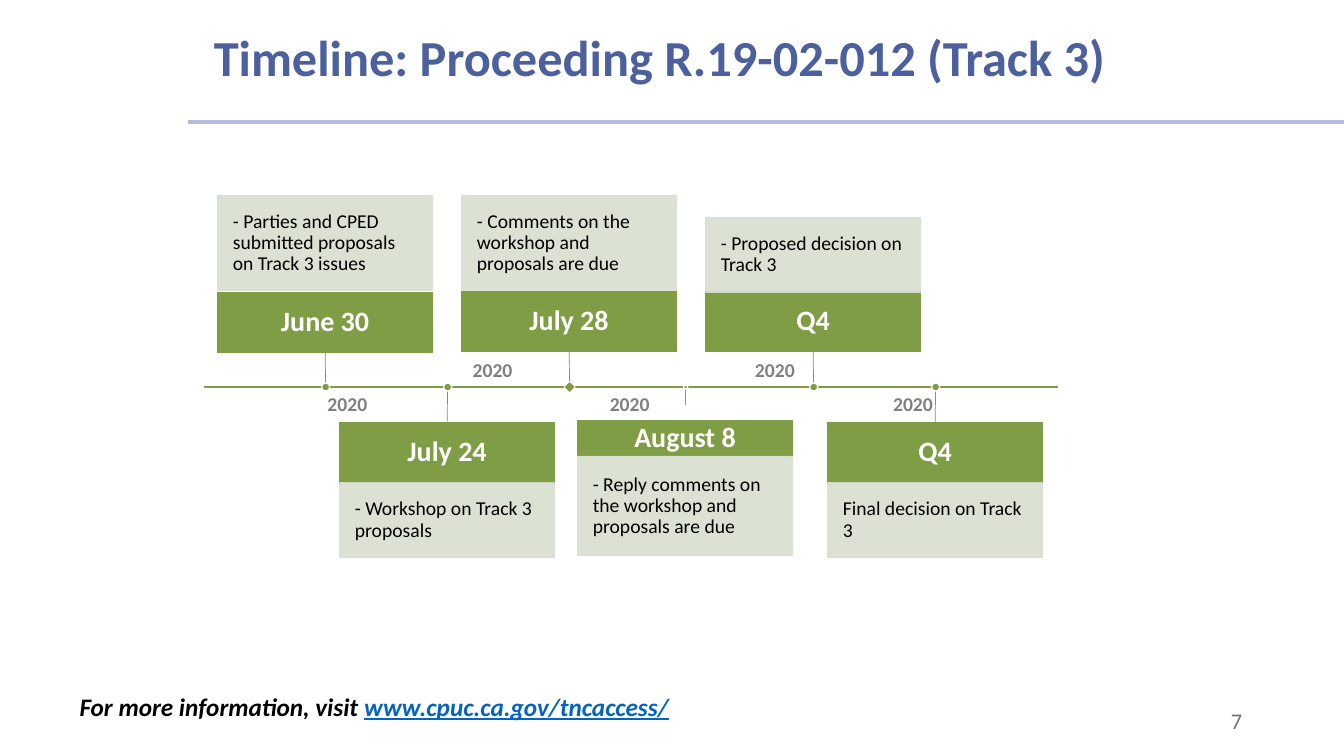
from dataclasses import dataclass

from lxml import etree
from pptx import Presentation
from pptx import util as u
from pptx.dml.color import RGBColor
from pptx.enum import shapes, text
from pptx.oxml.ns import qn
from pptx.shapes.autoshape import Shape
from pptx.shapes.connector import Connector
from pptx.slide import Slide
from pptx.text.text import TextFrame

PX = 9144  # EMU per px, 100 px to the inch
FONT = "Calibri"
TITLE_BLUE = RGBColor(0x4C, 0x60, 0x9E)
RULE_BLUE = RGBColor(0xB4, 0xBE, 0xDB)
LINK_BLUE = RGBColor(0x05, 0x63, 0xC1)
GREEN = RGBColor(0x7E, 0x9D, 0x45)
PALE_GREEN = RGBColor(0xD8, 0xDF, 0xCF)
GRAY = RGBColor(0x80, 0x80, 0x80)
PAGE_GRAY = RGBColor(0x76, 0x71, 0x71)
WHITE = RGBColor(0xFF, 0xFF, 0xFF)
BLACK = RGBColor(0, 0, 0)

AXIS_Y = 384
CARD_WIDTH = 213
DOT = shapes.MSO_SHAPE.OVAL
SQUARE = shapes.MSO_SHAPE.RECTANGLE
LEFT, CENTER, RIGHT = text.PP_ALIGN.LEFT, text.PP_ALIGN.CENTER, text.PP_ALIGN.RIGHT
MIDDLE, TOP = text.MSO_ANCHOR.MIDDLE, text.MSO_ANCHOR.TOP


@dataclass(frozen=True)
class Milestone:
    date: str
    detail: str
    left: int
    date_top: int
    detail_top: int
    detail_height: int
    date_height: int = 60
    marker: shapes.MSO_SHAPE = DOT
    marker_size: int = 8
    marker_line: float = 1
    loose_leader: bool = False

    @property
    def center(self) -> int:
        return self.left + CARD_WIDTH // 2 + 1

    @property
    def above(self) -> bool:
        return self.date_top < AXIS_Y


MILESTONES = [
    Milestone("June 30", "- Parties and CPED submitted proposals on Track 3 issues",
              216, 290, 194, 94),
    Milestone("July 24", "- Workshop on Track 3 proposals", 337, 419, 479, 74),
    Milestone("July 28", "- Comments on the workshop and proposals are due",
              458, 289, 194, 94, marker=SQUARE, marker_line=0.5),
    Milestone("August 8", "- Reply comments on the workshop and proposals are due",
              573, 417, 453, 98, date_height=35, marker_size=4, loose_leader=True),
    Milestone("Q4", "- Proposed decision on Track 3", 700, 289, 216, 74),
    Milestone("Q4", "Final decision on Track 3", 821, 419, 479, 74),
]
YEAR_LEFTS = [315, 459, 595, 739, 876]


def px(*values: int) -> list[u.Emu]:
    return [u.Emu(value * PX) for value in values]


def write(frame: TextFrame, words: str, *, size: int, color: RGBColor,
          bold: bool = False, italic: bool = False, underline: bool = False,
          align: text.PP_ALIGN = LEFT, anchor: text.MSO_ANCHOR = MIDDLE,
          inset: int | None = None, spacing: float = 1.0, wrap: bool = True) -> None:
    """Add a run to the first paragraph and format it."""
    frame.word_wrap = wrap
    frame.auto_size = text.MSO_AUTO_SIZE.NONE if wrap else text.MSO_AUTO_SIZE.SHAPE_TO_FIT_TEXT
    frame.vertical_anchor = anchor
    if inset is not None:
        frame.margin_left, frame.margin_top, frame.margin_right, frame.margin_bottom = px(*[inset] * 4)
    paragraph = frame.paragraphs[0]
    paragraph.alignment = align
    paragraph.line_spacing = spacing
    run = paragraph.add_run()
    run.text = words
    font = run.font
    font.name, font.size = FONT, u.Pt(size)
    font.bold, font.italic, font.underline = bold, italic, underline
    font.color.rgb = color


def add_box(slide: Slide, kind: shapes.MSO_SHAPE, left: int, top: int, width: int,
            height: int, fill: RGBColor, line: RGBColor, line_width: float = 1) -> Shape:
    shape = slide.shapes.add_shape(kind, *px(left, top, width, height))
    shape.shadow.inherit = False
    shape.fill.solid()
    shape.fill.fore_color.rgb = fill
    shape.line.color.rgb = line
    shape.line.width = u.Pt(line_width)
    return shape


def add_line(slide: Slide, x1: int, y1: int, x2: int, y2: int,
             color: RGBColor, width: float) -> Connector:
    line = slide.shapes.add_connector(shapes.MSO_CONNECTOR.STRAIGHT, *px(x1, y1, x2, y2))
    line.line.color.rgb = color
    line.line.width = u.Pt(width)
    etree.SubElement(line.element.spPr, qn("a:effectLst"))
    return line


def make_translucent(shape: Shape, percent: int) -> None:
    for color in shape.element.spPr.iter(qn("a:srgbClr")):
        etree.SubElement(color, qn("a:alpha"), val=str(percent * 1000))


def add_milestone(slide: Slide, item: Milestone) -> None:
    date = add_box(slide, SQUARE, item.left, item.date_top, CARD_WIDTH, item.date_height,
                   GREEN, GREEN)
    write(date.text_frame, item.date, size=20, color=WHITE, bold=True, align=CENTER,
          inset=11, spacing=0.9)

    detail = add_box(slide, SQUARE, item.left, item.detail_top, CARD_WIDTH,
                     item.detail_height, PALE_GREEN, PALE_GREEN)
    make_translucent(detail, 90)
    write(detail.text_frame, item.detail, size=14, color=BLACK, inset=15, spacing=0.9)

    # Leader between the date and the axis
    if item.loose_leader:
        add_line(slide, item.center, AXIS_Y - 2, item.center, AXIS_Y + 18, GREEN, 0.5)
    else:
        edge = item.date_top + (item.date_height if item.above else 0)
        leader = add_line(slide, item.center, edge, item.center, AXIS_Y, GREEN, 0.5)
        leader.begin_connect(date, 2 if item.above else 0)

    size = item.marker_size
    marker = add_box(slide, item.marker, item.center - size // 2, AXIS_Y - size // 2,
                     size, size, GREEN, WHITE, item.marker_line)
    marker.rotation = 45


def main() -> None:
    presentation = Presentation()
    presentation.slide_width, presentation.slide_height = px(1333, 750)
    slide = presentation.slides.add_slide(presentation.slide_layouts[5])

    # Title and rule
    title = slide.shapes.title
    title.left, title.top, title.width, title.height = px(202, 14, 1078, 91)
    write(title.text_frame, "Timeline: Proceeding R.19-02-012 (Track 3)",
          size=36, color=TITLE_BLUE, bold=True, spacing=0.9)
    add_line(slide, 186, 121, 1333, 121, RULE_BLUE, 3)

    # Timeline
    add_line(slide, 202, AXIS_Y, 1049, AXIS_Y, GREEN, 1)
    for item in MILESTONES:
        add_milestone(slide, item)

    # Years alternate below and above the axis
    for index, left in enumerate(YEAR_LEFTS):
        year = slide.shapes.add_textbox(*px(left, 350 if index % 2 else 383, 59, 34))
        write(year.text_frame, "2020", size=14, color=GRAY, bold=True, align=CENTER, inset=0)

    # Footer
    footer = slide.shapes.add_textbox(*px(69, 681, 611, 40)).text_frame
    write(footer, "For more information, visit ", size=18, color=BLACK, bold=True,
          italic=True, anchor=TOP, wrap=False)
    write(footer, "www.cpuc.ca.gov/tncaccess/", size=18, color=LINK_BLUE, bold=True,
          italic=True, underline=True, anchor=TOP, wrap=False)
    page = slide.shapes.add_textbox(*px(942, 695, 300, 40))
    write(page.text_frame, "7", size=16, color=PAGE_GRAY, align=RIGHT)

    presentation.save("out.pptx")


if __name__ == "__main__":
    main()
